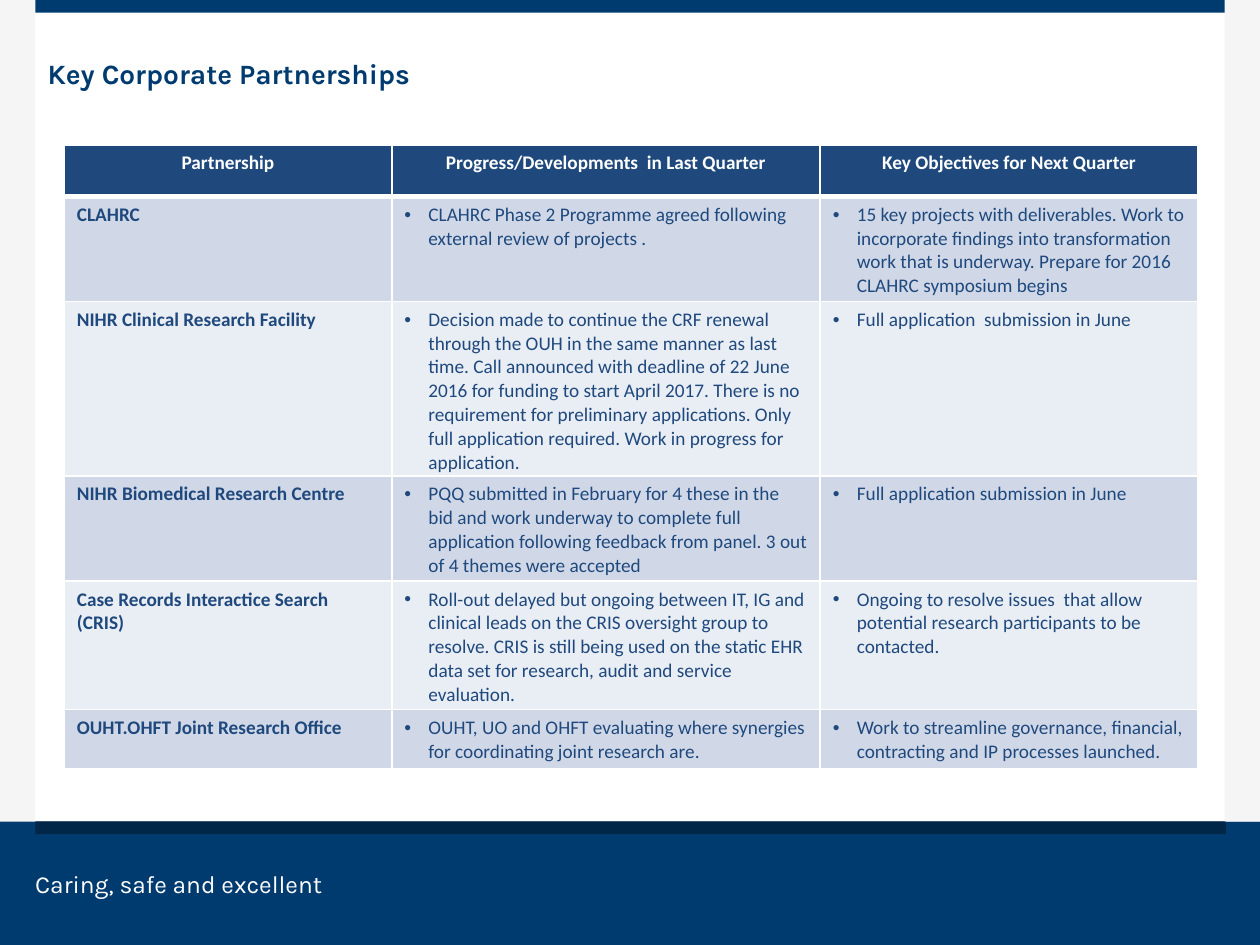
from lxml.etree import SubElement
from pptx import Presentation
from pptx.dml.color import RGBColor
from pptx.enum.shapes import MSO_SHAPE
from pptx.enum.text import MSO_ANCHOR, PP_ALIGN
from pptx.oxml.ns import qn
from pptx.util import Inches, Pt

NAVY = RGBColor(0x00, 0x3B, 0x6F)
DARK_NAVY = RGBColor(0x00, 0x26, 0x48)
PALE_GREY = RGBColor(0xF5, 0xF5, 0xF5)
WHITE = RGBColor(0xFF, 0xFF, 0xFF)
BLUE = RGBColor(0x1F, 0x49, 0x7D)
BAND_DARK = RGBColor(0xD0, 0xD8, 0xE8)
BAND_LIGHT = RGBColor(0xE9, 0xED, 0xF4)

BANDS = [
    (0, 0, 0.28, 6.52, PALE_GREY),
    (0, 6.52, 10, 0.98, NAVY),
    (0.28, 6.52, 9.45, 0.1, DARK_NAVY),
    (0.28, 0, 9.45, 0.1, NAVY),
    (9.72, 0, 0.28, 6.52, PALE_GREY),
]

ROWS = [
    ("Partnership", "Progress/Developments  in Last Quarter", "Key Objectives for Next Quarter"),
    (
        "CLAHRC",
        "CLAHRC Phase 2 Programme agreed following external review of projects .",
        "15 key projects with deliverables. Work to incorporate findings into transformation "
        "work that is underway. Prepare for 2016 CLAHRC symposium begins",
    ),
    (
        "NIHR Clinical Research Facility",
        "Decision made to continue the CRF renewal through the OUH in the same manner as last "
        "time. Call announced with deadline of 22 June 2016 for funding to start April 2017. "
        "There is no requirement for preliminary applications. Only full application required. "
        "Work in progress for application.",
        "Full application  submission in June",
    ),
    (
        "NIHR Biomedical Research Centre",
        "PQQ submitted in February for 4 these in the bid and work underway to complete full "
        "application following feedback from panel. 3 out of 4 themes were accepted",
        "Full application submission in June",
    ),
    (
        "Case Records Interactice Search (CRIS)",
        "Roll-out delayed but ongoing between IT, IG and clinical leads on the CRIS oversight "
        "group to resolve. CRIS is still being used on the static EHR data set for research, "
        "audit and service evaluation.",
        "Ongoing to resolve issues  that allow potential research participants to be contacted.",
    ),
    (
        "OUHT.OHFT Joint Research Office",
        "OUHT, UO and OHFT evaluating where synergies for coordinating joint research are.",
        "Work to streamline governance, financial, contracting and IP processes launched.",
    ),
]


def style_text(paragraph, name, size, color, bold):
    for span in paragraph.runs:
        span.font.name = name
        span.font.size = Pt(size)
        span.font.color.rgb = color
        span.font.bold = bold


def add_border(cell, side, width):
    line = SubElement(cell._tc.get_or_add_tcPr(), qn(f"a:ln{side}"), w=str(Pt(width)))
    fill = SubElement(line, qn("a:solidFill"))
    SubElement(fill, qn("a:srgbClr"), val=str(WHITE))


deck = Presentation()
deck.slide_width = Inches(10)
deck.slide_height = Inches(7.5)
page = deck.slides.add_slide(deck.slide_layouts[6])

for left, top, width, height, color in BANDS:
    band = page.shapes.add_shape(
        MSO_SHAPE.RECTANGLE, Inches(left), Inches(top), Inches(width), Inches(height)
    )
    band.shadow.inherit = False
    band.fill.solid()
    band.fill.fore_color.rgb = color
    band.line.fill.background()

motto = page.shapes.add_textbox(Inches(0.28), Inches(6.9), Inches(3.07), Inches(0.24)).text_frame
motto.margin_left = motto.margin_right = motto.margin_top = motto.margin_bottom = 0
motto.word_wrap = True
motto.text = "Caring, safe and excellent"
style_text(motto.paragraphs[0], "Karla", 14, WHITE, False)

title = page.shapes.add_textbox(Inches(0.28), Inches(0.33), Inches(9), Inches(0.51)).text_frame
title.word_wrap = True
title.vertical_anchor = MSO_ANCHOR.MIDDLE
title.text = "Key Corporate Partnerships"
style_text(title.paragraphs[0], "Karla", 16, NAVY, True)

table = page.shapes.add_table(
    len(ROWS), 3, Inches(0.51), Inches(1.15), Inches(9), Inches(0.41) * len(ROWS)
).table
for column, width in zip(table.columns, (2.6, 3.4, 3)):
    column.width = Inches(width)

for row_index, row in enumerate(ROWS):
    is_header = row_index == 0
    fill_color = BLUE if is_header else (BAND_LIGHT, BAND_DARK)[row_index % 2]
    for column_index, text in enumerate(row):
        cell = table.cell(row_index, column_index)
        cell.text = text
        paragraph = cell.text_frame.paragraphs[0]
        if is_header:
            paragraph.alignment = PP_ALIGN.CENTER
        elif column_index > 0:
            properties = paragraph._p.get_or_add_pPr()
            properties.set("marL", str(Inches(0.19)))
            properties.set("indent", str(-Inches(0.19)))
            SubElement(properties, qn("a:buFont"), typeface="Arial")
            SubElement(properties, qn("a:buChar"), char="•")
        style_text(
            paragraph, "Calibri", 11, WHITE if is_header else BLUE, is_header or column_index == 0
        )
        add_border(cell, "L", 1)
        add_border(cell, "R", 1)
        add_border(cell, "T", 3 if row_index == 1 else 1)
        add_border(cell, "B", 3 if is_header else 1)
        cell.fill.solid()
        cell.fill.fore_color.rgb = fill_color

deck.save("out.pptx")
